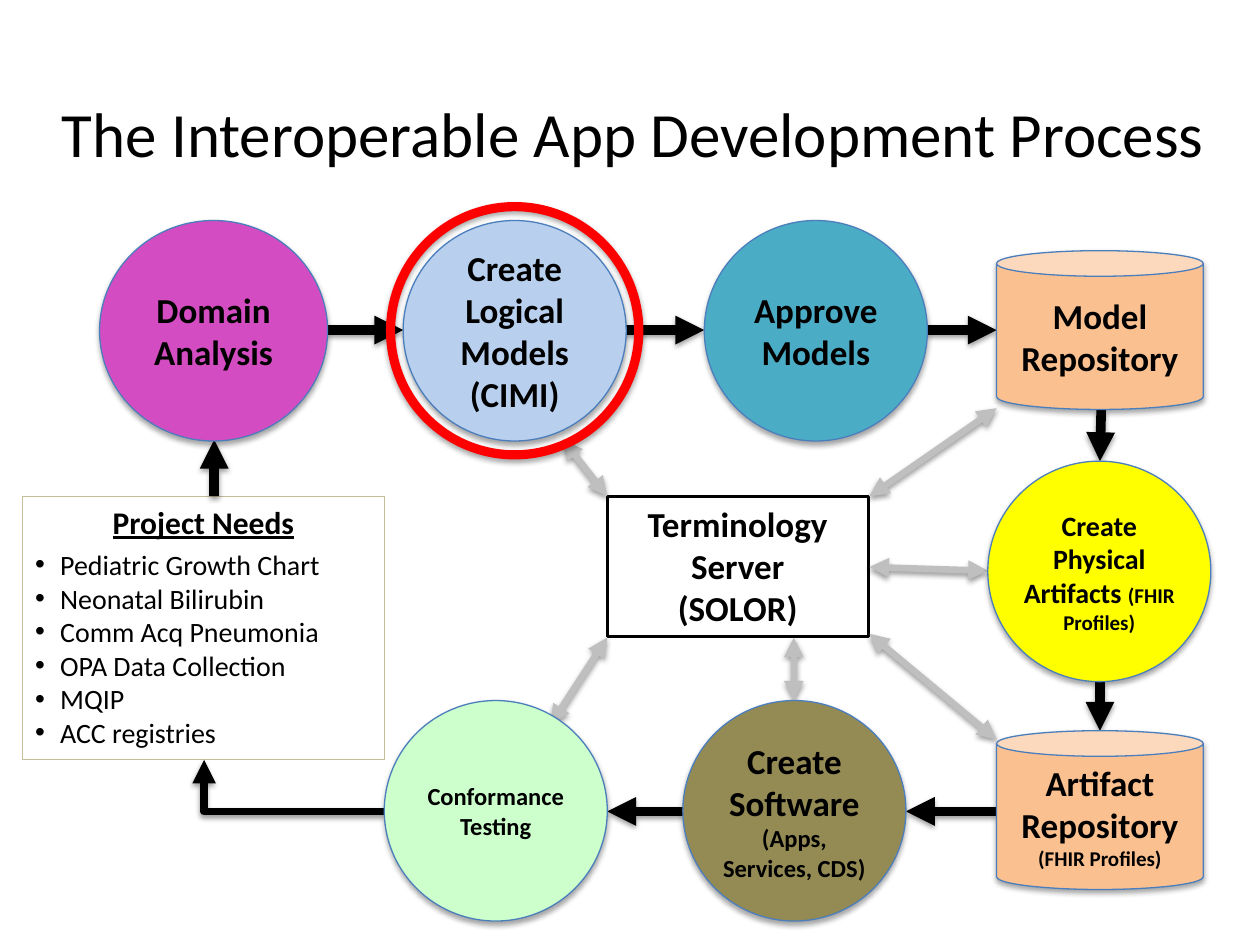
from lxml import etree
from pptx import Presentation
from pptx.dml.color import RGBColor
from pptx.enum import shapes, text
from pptx.oxml.ns import qn
from pptx.util import Inches, Pt

COLORS = {
    "black": "000000", "white": "FFFFFF", "gray": "BFBFBF", "red": "FF0000",
    "outline": "4B7EBC", "tan": "C4BD97", "magenta": "D44CC1",
    "light blue": "B8D0ED", "teal": "4BACC6", "peach": "FAC090",
    "yellow": "FFFF00", "olive": "948A54", "mint": "CCFFCC",
}
FONT = "Calibri"
TITLE = "The Interoperable App Development Process"
NEEDS_HEADING = "Project Needs"
NEEDS = ["Pediatric Growth Chart", "Neonatal Bilirubin", "Comm Acq Pneumonia",
         "OPA Data Collection", "MQIP", "ACC registries"]
TERMINOLOGY = ["Terminology", "Server", "(SOLOR)"]

CIRCLE, CAN = (1.77, 1.75), (1.64, 1.26)
# kind, left, top, size, fill, runs of (text, points)
NODES = [
    ("circle", 0.79, 1.75, (1.81, 1.75), "magenta", [("Domain Analysis", 20)]),
    ("circle", 3.2, 1.75, CIRCLE, "light blue", [("Create Logical Models (CIMI)", 20)]),
    ("circle", 5.59, 1.75, CIRCLE, "teal", [("Approve Models", 20)]),
    ("can", 7.91, 1.99, CAN, "peach", [("Model Repository", 20)]),
    ("circle", 7.84, 3.66, CIRCLE, "yellow",
     [("Create Physical Artifacts ", 16), ("(FHIR Profiles)", 12)]),
    ("can", 7.91, 5.8, CAN, "peach",
     [("Artifact Repository ", 20), ("(FHIR Profiles)", 12)]),
    ("circle", 5.42, 5.56, CIRCLE, "olive",
     [("Create Software ", 20), ("(Apps, Services, CDS)", 14)]),
    ("circle", 3.05, 5.56, CIRCLE, "mint", [("Conformance Testing", 14)]),
]
# x1, y1, x2, y2
FLOW_ARROWS = [
    (2.6, 2.62, 3.2, 2.62), (4.97, 2.62, 5.59, 2.62), (7.36, 2.62, 7.91, 2.62),
    (8.74, 3.25, 8.73, 3.66), (8.73, 5.41, 8.73, 5.8), (7.91, 6.44, 7.19, 6.44),
    (5.42, 6.44, 4.82, 6.44), (1.7, 3.94, 1.7, 3.49),
]
TERMINOLOGY_ARROWS = [
    (4.47, 3.49, 4.82, 3.94), (7.91, 3.24, 6.9, 3.94), (7.84, 4.53, 6.9, 4.5),
    (4.82, 5.06, 4.37, 5.75), (6.3, 5.06, 6.3, 5.56), (7.91, 5.87, 6.9, 5.03),
]
FEEDBACK_ARROW = (1.62, 6.03, 3.05, 6.44)


def rgb(name):
    return RGBColor.from_string(COLORS[name])


def add_shadow(sp_pr, distance, alpha):
    """Add a soft black shadow falling straight down."""
    effects = sp_pr.find(qn("a:effectLst"))
    if effects is None:
        effects = etree.SubElement(sp_pr, qn("a:effectLst"))
    shadow = etree.SubElement(effects, qn("a:outerShdw"), blurRad=str(Pt(3.1)),
                              dist=str(Pt(distance)), dir="5400000", rotWithShape="0")
    color = etree.SubElement(shadow, qn("a:srgbClr"), val=COLORS["black"])
    etree.SubElement(color, qn("a:alpha"), val=str(alpha * 1000))


def add_arrow(s, ends, color, width, both=False, kind=shapes.MSO_CONNECTOR.STRAIGHT):
    line = s.shapes.add_connector(kind, *map(Inches, ends))
    line.line.color.rgb = rgb(color)
    line.line.width = Pt(width)
    ln = line.line._get_or_add_ln()
    for end in ("a:headEnd", "a:tailEnd") if both else ("a:tailEnd",):
        etree.SubElement(ln, qn(end), type="triangle")
    add_shadow(line._element.spPr, 1.6, 38)
    return line


def add_shape(s, kind, box, fill, line, width):
    sp = s.shapes.add_shape(kind, *map(Inches, box))
    sp.shadow.inherit = False
    if fill:
        sp.fill.solid()
        sp.fill.fore_color.rgb = rgb(fill)
    else:
        sp.fill.background()
    sp.line.color.rgb = rgb(line)
    sp.line.width = Pt(width)
    sp.text_frame.word_wrap = True
    return sp


def style(p, size, bold=False, align=text.PP_ALIGN.CENTER):
    p.alignment = align
    f = p.font
    f.name, f.size, f.bold, f.color.rgb = FONT, Pt(size), bold, rgb("black")


def add_paragraphs(tf, lines):
    """Fill an empty text frame and return its paragraphs."""
    for i, line in enumerate(lines):
        p = tf.paragraphs[0] if i == 0 else tf.add_paragraph()
        p.text = line
    return tf.paragraphs


def add_title(s):
    title = s.shapes.title
    title.left, title.top, title.width, title.height = map(Inches, (0.3, -0.06, 9.45, 1.46))
    title.fill.solid()
    title.fill.fore_color.rgb = rgb("white")
    tf = title.text_frame
    tf.text = TITLE
    tf.vertical_anchor = text.MSO_ANCHOR.BOTTOM
    style(tf.paragraphs[0], 36)


def add_needs(s):
    sp = add_shape(s, shapes.MSO_SHAPE.RECTANGLE, (0.18, 3.94, 2.87, 2.09), None, "tan", 0.75)
    tf = sp.text_frame
    tf.vertical_anchor = text.MSO_ANCHOR.TOP
    heading, *items = add_paragraphs(tf, [NEEDS_HEADING] + NEEDS)
    style(heading, 18, bold=True)
    heading.font.underline = True
    heading.space_after = Pt(4)
    for p in items:
        p_pr = p._p.get_or_add_pPr()
        p_pr.set("marL", str(Inches(0.2)))
        p_pr.set("indent", str(Inches(-0.2)))
        etree.SubElement(p_pr, qn("a:buFont"), typeface="Arial")
        etree.SubElement(p_pr, qn("a:buChar"), char="•")
        style(p, 16, align=text.PP_ALIGN.LEFT)


def add_terminology(s):
    sp = add_shape(s, shapes.MSO_SHAPE.RECTANGLE, (4.82, 3.94, 2.07, 1.11), None, "black", 1.75)
    sp.text_frame.vertical_anchor = text.MSO_ANCHOR.TOP
    for p in add_paragraphs(sp.text_frame, TERMINOLOGY):
        style(p, 20, bold=True)


def add_node(s, kind, left, top, size, fill, runs):
    preset = shapes.MSO_SHAPE.CAN if kind == "can" else shapes.MSO_SHAPE.OVAL
    sp = add_shape(s, preset, (left, top, *size), fill, "outline", 0.75)
    add_shadow(sp._element.spPr, 1.8, 35)
    tf = sp.text_frame
    tf.vertical_anchor = text.MSO_ANCHOR.MIDDLE
    if kind == "can":
        sp.adjustments[0] = 0.161
    else:
        tf.margin_left = tf.margin_right = tf.margin_top = tf.margin_bottom = 0
    p = tf.paragraphs[0]
    style(p, runs[0][1], bold=True)
    for words, points in runs:
        r = p.add_run()
        r.text = words
        r.font.size = Pt(points)


def main():
    prs = Presentation()
    prs.slide_width, prs.slide_height = Inches(10), Inches(7.5)
    s = prs.slides.add_slide(prs.slide_layouts[5])
    add_title(s)
    add_needs(s)
    add_terminology(s)
    for ends in FLOW_ARROWS:
        add_arrow(s, ends, "black", 5.5)
    for ends in TERMINOLOGY_ARROWS:
        add_arrow(s, ends, "gray", 3.75, both=True)
    feedback = add_arrow(s, FEEDBACK_ARROW, "black", 4.5, kind=shapes.MSO_CONNECTOR.ELBOW)
    feedback._element.spPr.find(qn("a:prstGeom")).set("prst", "bentConnector2")
    feedback._element.spPr.find(qn("a:xfrm")).set("rot", "10800000")
    ring = add_shape(s, shapes.MSO_SHAPE.OVAL, (3.1, 1.64, 1.97, 1.97), None, "red", 5.25)
    add_shadow(ring._element.spPr, 1.8, 35)
    for node in NODES:
        add_node(s, *node)
    prs.save("out.pptx")


if __name__ == "__main__":
    main()
